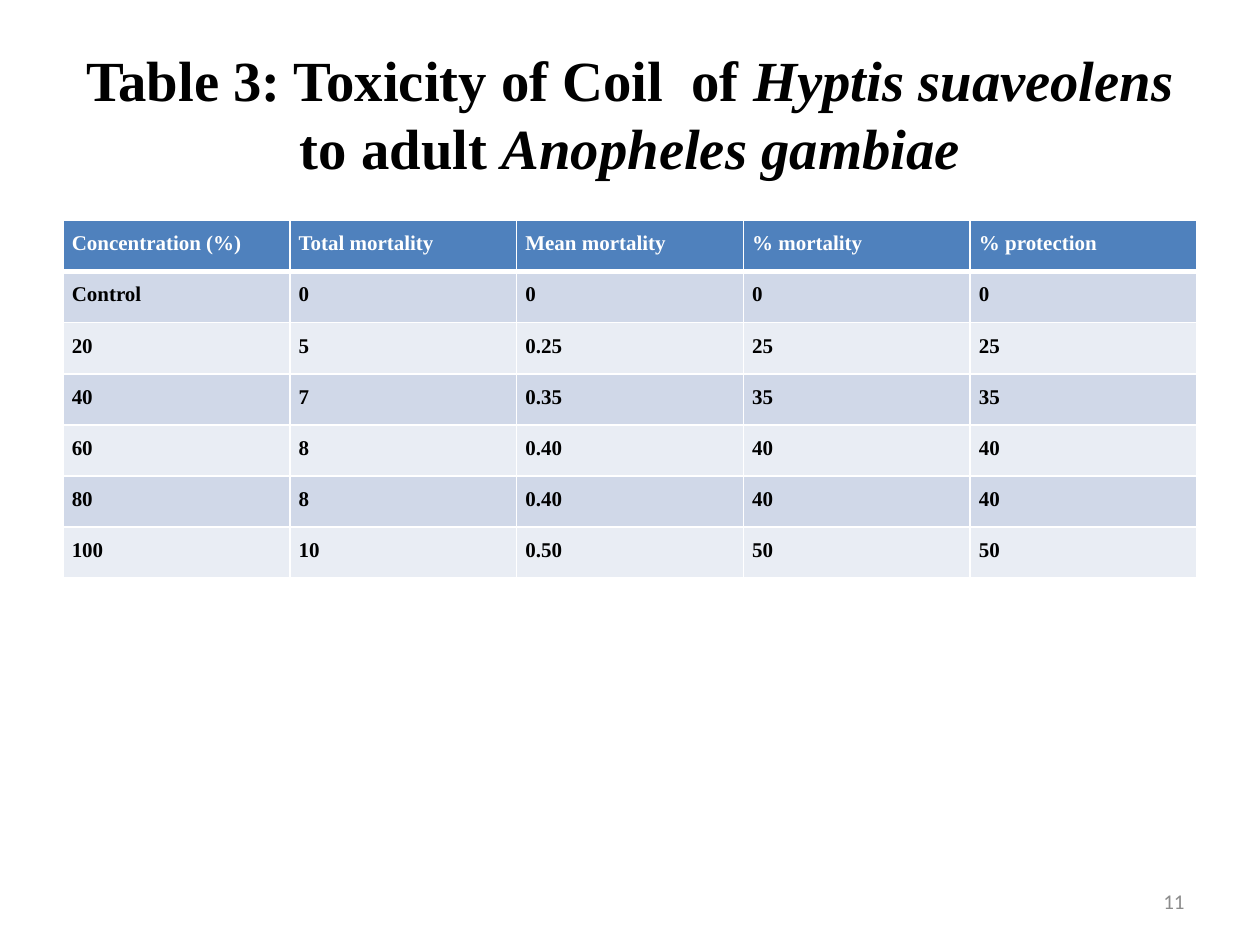
import pptx
import pptx.dml.color
import pptx.enum.text
import pptx.oxml
import pptx.oxml.ns
import pptx.util
from pptx.dml.color import RGBColor
from pptx.util import Inches

BLACK = RGBColor(0x00, 0x00, 0x00)
WHITE = RGBColor(0xFF, 0xFF, 0xFF)
GRAY = RGBColor(0x8C, 0x8C, 0x8C)
HEADER_BLUE = RGBColor(0x4F, 0x81, 0xBD)
BAND_DARK = RGBColor(0xD0, 0xD8, 0xE8)
BAND_LIGHT = RGBColor(0xE9, 0xED, 0xF4)
SERIF = "Times New Roman"


def add_span(para, text, size, color, font=SERIF, bold=True, italic=False):
    span = para.add_run()
    span.text = text
    span.font.name = font
    span.font.size = pptx.util.Pt(size)
    span.font.bold = bold
    span.font.italic = italic
    span.font.color.rgb = color


def add_border(cell, side, width):
    line = pptx.oxml.parse_xml(
        f'<a:{side} {pptx.oxml.ns.nsdecls("a")} w="{pptx.util.Pt(width)}">'
        f'<a:solidFill><a:srgbClr val="{WHITE}"/></a:solidFill></a:{side}>'
    )
    cell._tc.get_or_add_tcPr().append(line)


deck = pptx.Presentation()
deck.slide_width = Inches(10)
deck.slide_height = Inches(7.5)
page = deck.slides.add_slide(deck.slide_layouts[6])

# Title
title_box = page.shapes.add_textbox(Inches(0.5), Inches(0.3), Inches(9), Inches(1.25))
title_box.text_frame.word_wrap = True
title_box.text_frame.vertical_anchor = pptx.enum.text.MSO_ANCHOR.MIDDLE
title_box.text_frame.margin_bottom = Inches(0.11)
para = title_box.text_frame.paragraphs[0]
para.alignment = pptx.enum.text.PP_ALIGN.CENTER
para.line_spacing = pptx.util.Pt(39)
for text, italic in [
    ("Table 3: Toxicity of Coil  of ", False),
    ("Hyptis suaveolens", True),
    (" to adult ", False),
    ("Anopheles gambiae", True),
]:
    add_span(para, text, 32.4, BLACK, italic=italic)

# Toxicity table
rows = [
    ["Concentration (%)", "Total mortality", "Mean mortality", "% mortality", "% protection"],
    ["Control", "0", "0", "0", "0"],
    ["20", "5", "0.25", "25", "25"],
    ["40", "7", "0.35", "35", "35"],
    ["60", "8", "0.40", "40", "40"],
    ["80", "8", "0.40", "40", "40"],
    ["100", "10", "0.50", "50", "50"],
]
table = page.shapes.add_table(
    len(rows), len(rows[0]), Inches(0.5), Inches(1.75), Inches(9), Inches(2.84)
).table

for row_index, row in enumerate(rows):
    is_header = row_index == 0
    band = BAND_DARK if row_index % 2 else BAND_LIGHT
    for column_index, text in enumerate(row):
        cell = table.cell(row_index, column_index)
        cell.margin_left = cell.margin_right = Inches(0.07)
        cell.margin_top = cell.margin_bottom = 0
        for side in ("lnL", "lnR", "lnT", "lnB"):
            header_rule = (is_header and side == "lnB") or (row_index == 1 and side == "lnT")
            add_border(cell, side, 3 if header_rule else 1)
        cell.fill.solid()
        cell.fill.fore_color.rgb = HEADER_BLUE if is_header else band
        para = cell.text_frame.paragraphs[0]
        para.alignment = pptx.enum.text.PP_ALIGN.JUSTIFY
        para.line_spacing = 1.5
        if not is_header and column_index > 0:
            para.space_after = pptx.util.Pt(10)
        add_span(para, text, 12, WHITE if is_header else BLACK)

# Page number
number_box = page.shapes.add_textbox(Inches(7.17), Inches(6.95), Inches(2.33), Inches(0.4))
number_box.text_frame.word_wrap = True
number_box.text_frame.vertical_anchor = pptx.enum.text.MSO_ANCHOR.MIDDLE
para = number_box.text_frame.paragraphs[0]
para.alignment = pptx.enum.text.PP_ALIGN.RIGHT
add_span(para, "11", 12, GRAY, font="Calibri", bold=False)

deck.save("out.pptx")
